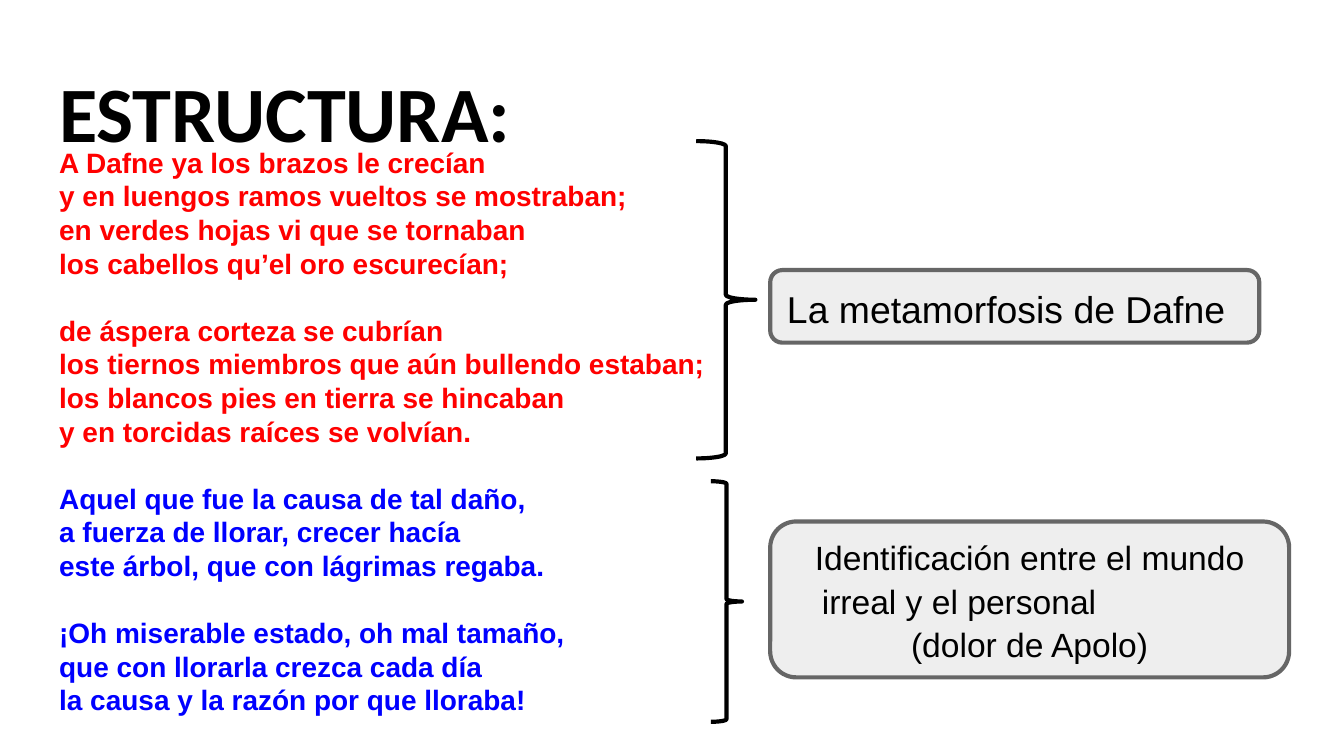
from pptx import Presentation
from pptx.dml.color import RGBColor
from pptx.enum import shapes, text
from pptx.oxml import ns, xmlchemy
from pptx.util import Pt

RED, BLUE, BLACK = "FF0000", "0000FF", "000000"
STANZAS = [
    (RED, ["A Dafne ya los brazos le crecían",
           "y en luengos ramos vueltos se mostraban;",
           "en verdes hojas vi que se tornaban",
           "los cabellos qu’el oro escurecían;"]),
    (RED, ["de áspera corteza se cubrían",
           "los tiernos miembros que aún bullendo estaban;",
           "los blancos pies en tierra se hincaban",
           "y en torcidas raíces se volvían."]),
    (BLUE, ["Aquel que fue la causa de tal daño,",
            "a fuerza de llorar, crecer hacía",
            "este árbol, que con lágrimas regaba."]),
    (BLUE, ["¡Oh miserable estado, oh mal tamaño,",
            "que con llorarla crezca cada día",
            "la causa y la razón por que lloraba!"]),
]
LEFT, CENTER = text.PP_ALIGN.LEFT, text.PP_ALIGN.CENTER
VERSE = {"name": "Arial", "size": Pt(15), "bold": True}


def apply(obj, values):
    for name, value in values.items():
        setattr(obj, name, value)


def rgb(value):
    return RGBColor.from_string(value)


def place(sp, left, top, width, height):
    apply(sp, {"left": Pt(left), "top": Pt(top),
               "width": Pt(width), "height": Pt(height)})


def setup_frame(sp, anchor):
    tf = sp.text_frame
    apply(tf, {"word_wrap": True, "auto_size": text.MSO_AUTO_SIZE.NONE,
               "vertical_anchor": anchor})
    sides = ("left", "top", "right", "bottom")
    apply(tf, {f"margin_{side}": Pt(7.2) for side in sides})
    return tf


def add_line(tf, line, font, color, spacing, before=0, align=LEFT, indent=0):
    """Write one paragraph without a bullet."""
    p = tf.paragraphs[0]
    if p.runs:
        p = tf.add_paragraph()
    apply(p, {"alignment": align, "line_spacing": spacing,
              "space_before": Pt(before), "space_after": Pt(0)})
    pPr = p._p.get_or_add_pPr()
    pPr.set("marL", str(Pt(indent)))
    pPr.set("indent", "0")
    pPr.append(xmlchemy.OxmlElement("a:buNone"))
    r = p.add_run()
    r.text = line
    apply(r.font, font)
    r.font.color.rgb = rgb(color)


def add_shape(s, kind, box, adjustment, line):
    sp = s.shapes.add_shape(kind, *(Pt(v) for v in box))
    sp.adjustments[0] = adjustment
    sp.shadow.inherit = False
    sp.line.color.rgb = rgb(line)
    sp.line.width = Pt(2.25)
    return sp


def add_brace(s, *box):
    sp = add_shape(s, shapes.MSO_SHAPE.RIGHT_BRACE, box, 0.083, BLACK)
    sp.fill.background()


def add_label(s, box, size, spacing, lines):
    """Rounded box; each line is (text, alignment, indent)."""
    sp = add_shape(s, shapes.MSO_SHAPE.ROUNDED_RECTANGLE, box, 0.167, "666666")
    sp.fill.solid()
    sp.fill.fore_color.rgb = rgb("EEEEEE")
    tf = setup_frame(sp, text.MSO_ANCHOR.MIDDLE)
    font = {"name": "Arial", "size": Pt(size), "bold": False}
    for line, align, indent in lines:
        add_line(tf, line, font, BLACK, Pt(spacing), align=align, indent=indent)


def main():
    prs = Presentation()
    apply(prs, {"slide_width": Pt(720), "slide_height": Pt(405)})
    s = prs.slides.add_slide(prs.slide_layouts[1])
    title, body = s.placeholders

    # Title
    place(title, 24.5, 23, 671, 63.4)
    tf = setup_frame(title, text.MSO_ANCHOR.TOP)
    heading = {"name": "Calibri", "size": Pt(42), "bold": True}
    add_line(tf, "ESTRUCTURA:", heading, BLACK, 1.08)

    # Poem, with one empty line's height between stanzas
    place(body, 24.5, 70.6, 362, 341.3)
    tf = setup_frame(body, text.MSO_ANCHOR.TOP)
    for n, (color, verses) in enumerate(STANZAS):
        for i, verse in enumerate(verses):
            gap = 18 if n and i == 0 else 0
            add_line(tf, verse, VERSE, color, Pt(18), before=gap)

    # Braces: quartets and tercets
    add_brace(s, 373, 75.6, 31.7, 170)
    add_brace(s, 380.9, 257.8, 16.6, 128.9)

    # Meaning of each part
    add_label(s, (412.6, 144.7, 262, 38.9), 20, 26,
              [("La metamorfosis de Dafne", LEFT, 0)])
    add_label(s, (412.6, 279.4, 278, 83.5), 18, 23.3,
              [("Identificación entre el mundo", CENTER, 0),
               ("irreal y el personal", LEFT, 16.5),
               ("(dolor de Apolo)", CENTER, 0)])
    prs.save("out.pptx")


if __name__ == "__main__":
    main()
